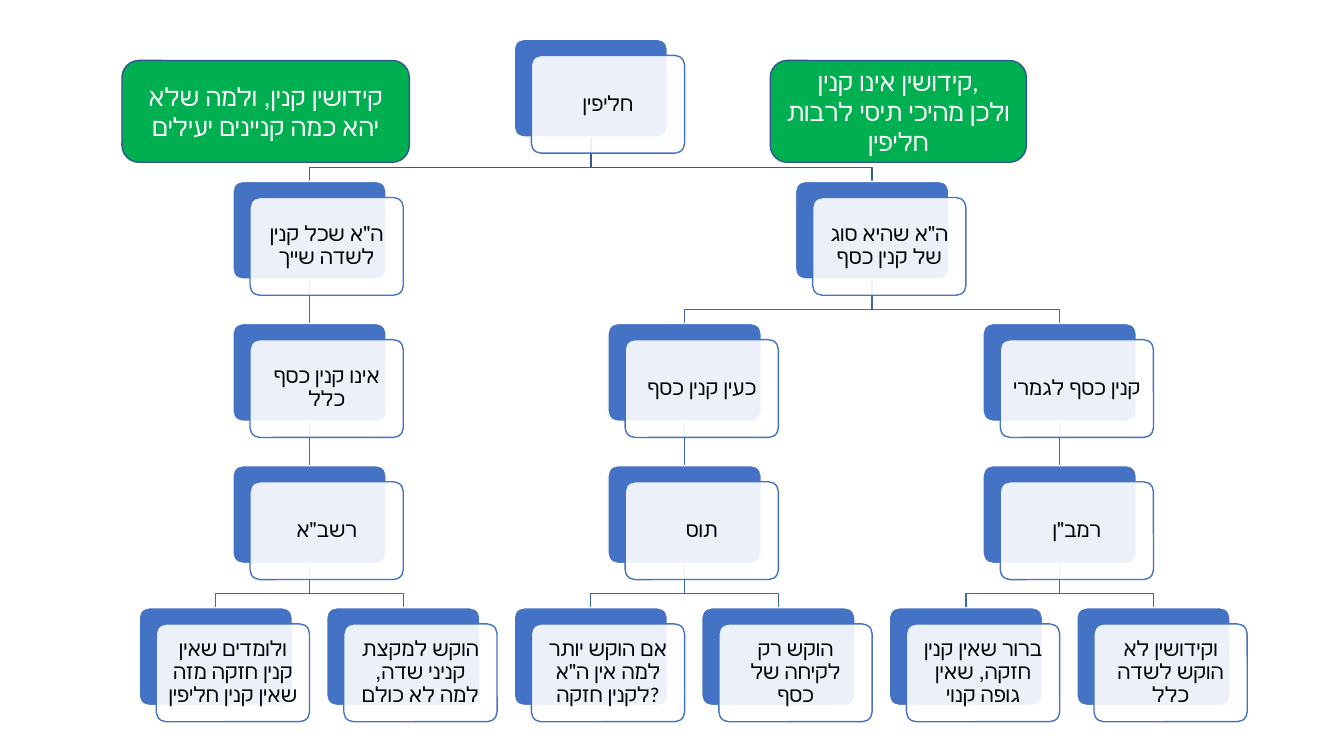
from dataclasses import dataclass

from lxml import etree
from pptx import Presentation
from pptx.dml.color import RGBColor
from pptx.enum.shapes import MSO_CONNECTOR, MSO_SHAPE
from pptx.enum.text import MSO_ANCHOR, PP_ALIGN
from pptx.oxml.ns import qn
from pptx.util import Emu, Pt

STRAIGHT = MSO_CONNECTOR.STRAIGHT
ROUNDED = MSO_SHAPE.ROUNDED_RECTANGLE
CENTER = PP_ALIGN.CENTER
MIDDLE = MSO_ANCHOR.MIDDLE

COLORS = {
    "blue": "4472C4",
    "root_line": "365B9D",
    "branch_line": "3E67B2",
    "green": "00B050",
    "green_line": "325491",
    "white": "FFFFFF",
    "black": "000000",
}
FONT = "Calibri"

# Lengths in px, 100 to the inch
PX = 9144
PAGE_WIDTH, PAGE_HEIGHT = 1333, 750
CARD_WIDTH, CARD_HEIGHT = 152, 97
CARD_SHIFT_X, CARD_SHIFT_Y = 17, 16
CARD_INSET = 9
TREE_LEFT, TREE_TOP = 138, 39
COLUMN_STEP, ROW_STEP = 93, 141
BEND_DROP = 30


@dataclass(frozen=True)
class Node:
    column: int
    text: str
    children: tuple["Node", ...] = ()


@dataclass(frozen=True)
class Callout:
    left: int
    top: int
    width: int
    height: int
    lines: tuple[str, ...]


TREE = Node(4, "חליפין", (
    Node(1, 'ה"א שכל קנין לשדה שייך', (
        Node(1, "אינו קנין כסף כלל", (
            Node(1, 'רשב"א', (
                Node(0, "ולומדים שאין קנין חזקה מזה שאין קנין חליפין"),
                Node(2, "הוקש למקצת קניני שדה, למה לא כולם"),
            )),
        )),
    )),
    Node(7, 'ה"א שהיא סוג של קנין כסף', (
        Node(5, "כעין קנין כסף", (
            Node(5, "תוס", (
                Node(4, 'אם הוקש יותר למה אין ה"א לקנין חזקה?'),
                Node(6, "הוקש רק לקיחה של כסף"),
            )),
        )),
        Node(9, "קנין כסף לגמרי", (
            Node(9, 'רמב"ן', (
                Node(8, "ברור שאין קנין חזקה, שאין גופה קנוי"),
                Node(10, "וקידושין לא הוקש לשדה כלל"),
            )),
        )),
    )),
))

CALLOUTS = (
    Callout(764, 60, 254, 101, ("קידושין אינו קנין,", "ולכן מהיכי תיסי לרבות חליפין")),
    Callout(121, 60, 285, 101, ("קידושין קנין, ולמה שלא יהא כמה קניינים יעילים",)),
)


def px(length: int) -> Emu:
    return Emu(length * PX)


def color(name: str) -> RGBColor:
    return RGBColor.from_string(COLORS[name])


def set_line(shape, name: str) -> None:
    shape.line.color.rgb = color(name)
    shape.line.width = Pt(1)


def add_box(page, left: int, top: int, width: int, height: int, fill: str, line: str):
    box = page.shapes.add_shape(ROUNDED, px(left), px(top), px(width), px(height))
    box.shadow.inherit = False
    box.fill.solid()
    box.fill.fore_color.rgb = color(fill)
    set_line(box, line)
    return box


def write_text(box, lines: tuple[str, ...], size: int, name: str, spacing: float) -> None:
    frame = box.text_frame
    frame.word_wrap = True
    frame.vertical_anchor = MIDDLE
    frame.text = "\n".join(lines)
    for para in frame.paragraphs:
        para.alignment = CENTER
        para.line_spacing = spacing
        for span in para.runs:
            span.font.name = FONT
            span.font.size = Pt(size)
            span.font.color.rgb = color(name)


def node_left(node: Node) -> int:
    return TREE_LEFT + node.column * COLUMN_STEP


def row_top(row: int) -> int:
    return TREE_TOP + row * ROW_STEP


def add_branch(page, parent: Node, child: Node, row: int) -> None:
    center = node_left(parent) + CARD_WIDTH // 2
    child_center = node_left(child) + CARD_WIDTH // 2
    start, end = row_top(row) + CARD_HEIGHT, row_top(row + 1)
    if center == child_center:
        branch = page.shapes.add_connector(
            STRAIGHT, px(center), px(start), px(center), px(end))
        etree.SubElement(branch._element.spPr, qn("a:effectLst"))
    else:
        bend = start + BEND_DROP
        builder = page.shapes.build_freeform(center, start, scale=PX)
        builder.add_line_segments(
            [(center, bend), (child_center, bend), (child_center, end)], close=False)
        branch = builder.convert_to_shape()
        branch.fill.background()
        branch.shadow.inherit = False
    set_line(branch, "root_line" if row == 0 else "branch_line")


def add_branches(page, node: Node, row: int = 0) -> None:
    for child in node.children:
        add_branch(page, node, child, row)
        add_branches(page, child, row + 1)


def add_cards(page, node: Node, row: int = 0) -> None:
    left, top = node_left(node), row_top(row)
    back = add_box(page, left, top, CARD_WIDTH, CARD_HEIGHT, "blue", "white")
    front = add_box(page, left + CARD_SHIFT_X, top + CARD_SHIFT_Y,
                    CARD_WIDTH, CARD_HEIGHT, "white", "blue")
    for card in (back, front):
        card.adjustments[0] = 0.1
    tint = front.fill._xPr.find(qn("a:solidFill"))[0]
    etree.SubElement(tint, qn("a:alpha"), val="90000")
    frame = front.text_frame
    frame.margin_left = frame.margin_right = px(CARD_INSET)
    frame.margin_top = frame.margin_bottom = px(CARD_INSET)
    write_text(front, (node.text,), 15, "black", 0.9)
    for child in node.children:
        add_cards(page, child, row + 1)


def main() -> None:
    deck = Presentation()
    deck.slide_width, deck.slide_height = px(PAGE_WIDTH), px(PAGE_HEIGHT)
    page = deck.slides.add_slide(deck.slide_layouts[6])

    # Tree: branches behind, cards in front
    add_branches(page, TREE)
    add_cards(page, TREE)

    # Green callouts
    for callout in CALLOUTS:
        box = add_box(page, callout.left, callout.top, callout.width, callout.height,
                      "green", "green_line")
        write_text(box, callout.lines, 18, "white", 1.0)

    deck.save("out.pptx")


if __name__ == "__main__":
    main()
